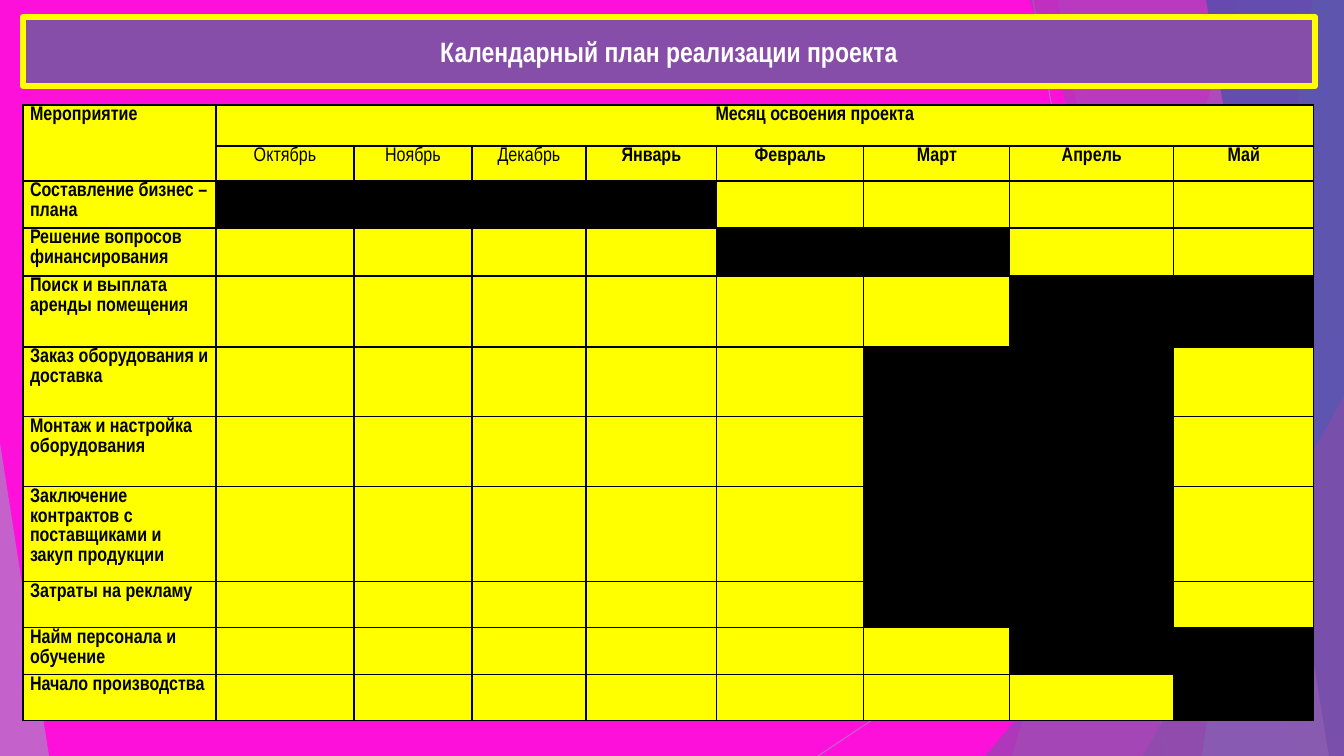
from lxml.etree import SubElement
from pptx import Presentation
from pptx.dml.color import RGBColor
from pptx.enum.shapes import MSO_CONNECTOR, MSO_SHAPE
from pptx.enum.text import MSO_ANCHOR, MSO_AUTO_SIZE, PP_ALIGN
from pptx.oxml.ns import qn
from pptx.util import Emu, Pt

PX = 914400 / 100.8
WIDTH, HEIGHT = 1344, 756
FONT = "Arial Narrow"
COLORS = {
    "magenta": "FC10DA", "lilac": "AD84C6", "purple": "874EA9",
    "lavender": "8784C7", "indigo": "524EAB",
    "yellow": "FFFF00", "black": "000000", "white": "FFFFFF",
}

RAYS = [((1033, 0), (1167, HEIGHT)), ((WIDTH, 406), (818, HEIGHT))]
# Bands reach the right edge: top left x, bottom left x, colour, opacity
BACK_BANDS = [(1238, 1012, "lilac", 36), (1058, 1192, "lilac", 20)]
FRONT_BANDS = [(1029, 1301, "purple", 50), (1313, 1202, "lavender", 70),
               (1206, 1329, "indigo", 80)]
# Triangles stand on the bottom edge: left, top, width, apex, colour, opacity
BACK_TRIANGLE = (985, 336, 359, 1, "purple", 66)
FRONT_TRIANGLES = [(1143, 396, 201, 1, "purple", 66),
                   (0, 443, 49, 0, "lilac", 70)]

COLUMN_WIDTHS = [193, 138, 118, 114, 131, 147, 146, 164, 140]
HEADER_HEIGHTS = [41, 35]
MONTHS = ["Октябрь", "Ноябрь", "Декабрь", "Январь", "Февраль", "Март",
          "Апрель", "Май"]
FIRST_BOLD_MONTH = 4
# Activity, first month, last month, row height
ACTIVITIES = [
    ("Составление бизнес – плана", 1, 4, 47),
    ("Решение вопросов финансирования", 5, 6, 48),
    ("Поиск и выплата аренды помещения", 7, 8, 71),
    ("Заказ оборудования и доставка", 6, 7, 70),
    ("Монтаж и настройка оборудования", 6, 7, 70),
    ("Заключение контрактов с поставщиками и закуп продукции", 6, 7, 95),
    ("Затраты на рекламу", 6, 7, 46),
    ("Найм персонала и обучение", 7, 8, 47),
    ("Начало производства", 8, 8, 46),
]


def px(length):
    return Emu(round(length * PX))


def rgb(name):
    return RGBColor.from_string(COLORS[name])


def set_all(target, values):
    for key, value in values.items():
        setattr(target, key, value)


def paint(fill, color):
    fill.solid()
    fill.fore_color.rgb = rgb(color)


def set_opacity(properties, percent):
    color = properties.find(".//" + qn("a:srgbClr"))
    SubElement(color, qn("a:alpha"), val=str(percent * 1000))


def write(frame, text, size, color, bold=True, align=PP_ALIGN.LEFT, spacing=1.0):
    frame.text = text
    paragraph = frame.paragraphs[0]
    set_all(paragraph, {"alignment": align, "line_spacing": spacing})
    set_all(paragraph.runs[0].font,
            {"name": FONT, "size": Pt(size), "bold": bold})
    paragraph.runs[0].font.color.rgb = rgb(color)
    return paragraph


def add_ray(slide, start, end):
    ray = slide.shapes.add_connector(
        MSO_CONNECTOR.STRAIGHT, *map(px, start + end))
    ray.line.width = Pt(0.75)
    ray.line.color.rgb = rgb("lilac")
    properties = ray._element.spPr
    set_opacity(properties, 70)
    SubElement(properties, qn("a:effectLst"))


def finish_decor(decor, color, opacity):
    paint(decor.fill, color)
    decor.line.fill.background()
    decor.shadow.inherit = False
    set_opacity(decor._element.spPr, opacity)


def add_band(slide, top_x, bottom_x, color, opacity):
    outline = slide.shapes.build_freeform(top_x, -1, scale=PX)
    outline.add_line_segments(
        [(WIDTH, -1), (WIDTH, HEIGHT), (bottom_x, HEIGHT)], close=True)
    finish_decor(outline.convert_to_shape(), color, opacity)


def add_triangle(slide, left, top, width, apex, color, opacity):
    triangle = slide.shapes.add_shape(
        MSO_SHAPE.ISOSCELES_TRIANGLE,
        *map(px, (left, top, width, HEIGHT - top)))
    triangle.adjustments[0] = apex
    finish_decor(triangle, color, opacity)


def add_backdrop(slide):
    paint(slide.background.fill, "magenta")
    for ray in RAYS:
        add_ray(slide, *ray)
    for band in BACK_BANDS:
        add_band(slide, *band)
    add_triangle(slide, *BACK_TRIANGLE)
    for band in FRONT_BANDS:
        add_band(slide, *band)
    for triangle in FRONT_TRIANGLES:
        add_triangle(slide, *triangle)


def place_title(slide, text):
    """Turn the title placeholder into a rounded banner above the backdrop."""
    title = slide.shapes.title
    set_all(title, {"left": px(23), "top": px(17),
                    "width": px(1292), "height": px(69)})
    outline = SubElement(title._element.spPr, qn("a:prstGeom"), prst="roundRect")
    SubElement(outline, qn("a:avLst"))
    paint(title.fill, "purple")
    title.line.width = Pt(4.5)
    title.line.color.rgb = rgb("yellow")
    set_all(title.text_frame, {"word_wrap": True,
                               "auto_size": MSO_AUTO_SIZE.NONE,
                               "vertical_anchor": MSO_ANCHOR.MIDDLE})
    write(title.text_frame, text, 20, "white", align=PP_ALIGN.CENTER)
    slide.shapes._spTree.append(title._element)


def add_borders(cell):
    properties = cell._tc.get_or_add_tcPr()
    for index, side in enumerate(("a:lnL", "a:lnR", "a:lnT", "a:lnB")):
        border = properties.makeelement(qn(side), {"w": str(Pt(1))})
        ink = SubElement(border, qn("a:solidFill"))
        SubElement(ink, qn("a:srgbClr"), val=COLORS["black"])
        properties.insert(index, border)


def format_cell(cell, color):
    set_all(cell, {"margin_left": px(7), "margin_right": px(7),
                   "margin_top": 0, "margin_bottom": 0})
    paint(cell.fill, color)
    add_borders(cell)


def write_cell(cell, text, **options):
    return write(cell.text_frame, text, 14, "black", spacing=1.07, **options)


def add_schedule(slide):
    heights = HEADER_HEIGHTS + [activity[-1] for activity in ACTIVITIES]
    schedule = slide.shapes.add_table(
        len(heights), len(COLUMN_WIDTHS),
        *map(px, (23, 105, sum(COLUMN_WIDTHS), sum(heights)))).table
    set_all(schedule, {"first_row": False, "horz_banding": False})
    for column, width in zip(schedule.columns, COLUMN_WIDTHS):
        column.width = px(width)
    for row, height in zip(schedule.rows, heights):
        row.height = px(height)

    for row in range(len(HEADER_HEIGHTS)):
        for column in range(len(COLUMN_WIDTHS)):
            format_cell(schedule.cell(row, column), "yellow")
    schedule.cell(0, 0).merge(schedule.cell(1, 0))
    schedule.cell(0, 1).merge(schedule.cell(0, len(MONTHS)))
    write_cell(schedule.cell(0, 0), "Мероприятие")
    heading = write_cell(schedule.cell(0, 1), "Месяц освоения проекта",
                         align=PP_ALIGN.CENTER)
    heading._p.get_or_add_pPr().set("marL", str(px(100)))
    for number, month in enumerate(MONTHS, 1):
        write_cell(schedule.cell(1, number), month, align=PP_ALIGN.CENTER,
                   bold=number >= FIRST_BOLD_MONTH)

    for row, (activity, first, last, _) in enumerate(
            ACTIVITIES, len(HEADER_HEIGHTS)):
        for column in range(len(COLUMN_WIDTHS)):
            active = first <= column <= last
            format_cell(schedule.cell(row, column),
                        "black" if active else "yellow")
        write_cell(schedule.cell(row, 0), activity)


def main():
    deck = Presentation()
    set_all(deck, {"slide_width": px(WIDTH), "slide_height": px(HEIGHT)})
    slide = deck.slides.add_slide(deck.slide_layouts[5])
    add_backdrop(slide)
    place_title(slide, "Календарный план реализации проекта")
    add_schedule(slide)
    deck.save("out.pptx")


if __name__ == "__main__":
    main()
